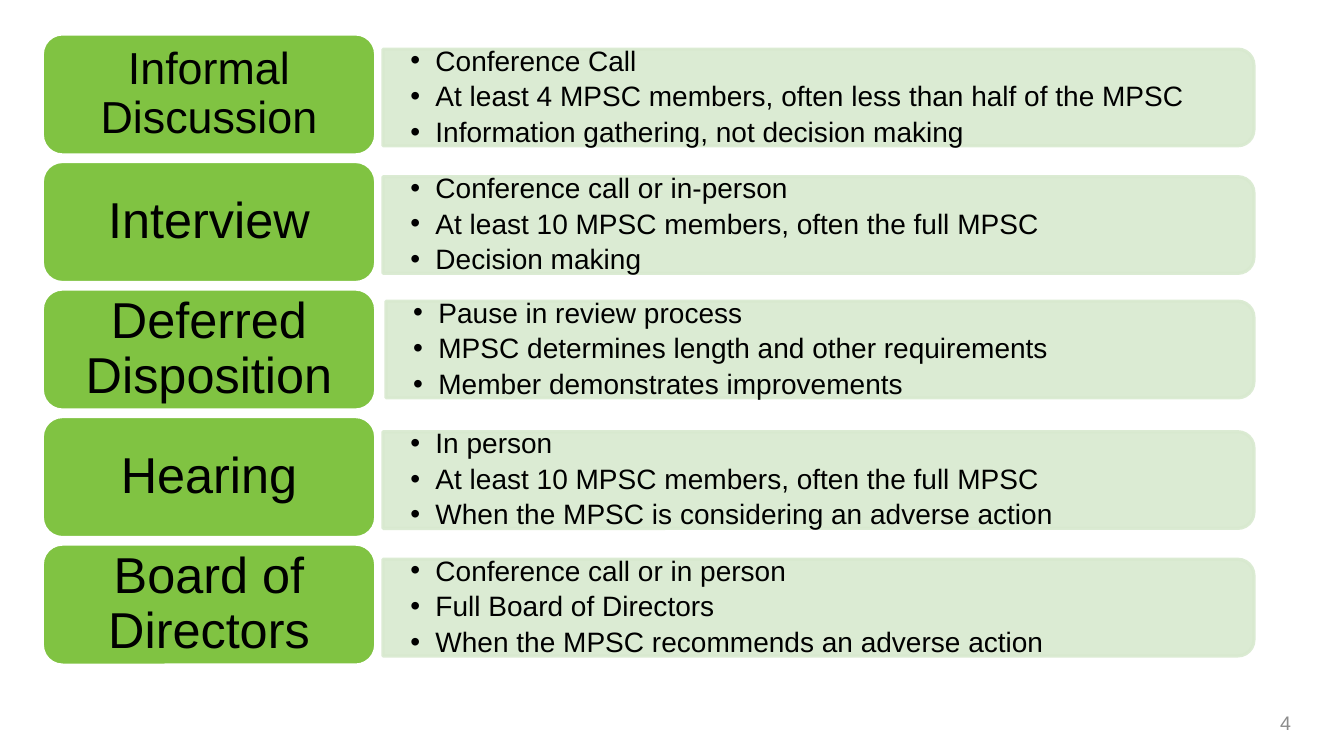
from dataclasses import dataclass

from lxml.etree import SubElement
from pptx import Presentation
from pptx.dml.color import RGBColor
from pptx.enum.shapes import MSO_SHAPE as Preset
from pptx.enum.text import MSO_ANCHOR as Anchor, PP_ALIGN as Align
from pptx.oxml.ns import qn
from pptx.shapes.autoshape import Shape
from pptx.slide import Slide
from pptx.text.text import TextFrame
from pptx.util import Inches, Length, Pt

GREEN = RGBColor(0x80, 0xC3, 0x42)
PALE_GREEN = RGBColor(0xD8, 0xE9, 0xCF)
WHITE = RGBColor(0xFF, 0xFF, 0xFF)
BLACK = RGBColor(0x00, 0x00, 0x00)
GRAY = RGBColor(0x8C, 0x8C, 0x8C)

SLIDE_WIDTH, SLIDE_HEIGHT = Inches(13.33), Inches(7.5)

# Percentages of the slide's width and height
FIRST_ROW, ROW_PITCH = 4.5, 16.87
LABEL_LEFT, LABEL_WIDTH, LABEL_HEIGHT = 3.15, 24.8, 16
PANEL_LEFT, PANEL_RIGHT, PANEL_HEIGHT = 28.5, 93.3, 12.8
PANEL_MIDDLE = 8.4


@dataclass
class Step:
    title: str
    points: list[str]
    title_size: int = 36
    shift_right: float = 0
    shift_down: float = 0


STEPS = [
    Step("Informal Discussion",
         ["Conference Call",
          "At least 4 MPSC members, often less than half of the MPSC",
          "Information gathering, not decision making"], title_size=32),
    Step("Interview",
         ["Conference call or in-person",
          "At least 10 MPSC members, often the full MPSC",
          "Decision making"]),
    Step("Deferred Disposition",
         ["Pause in review process",
          "MPSC determines length and other requirements",
          "Member demonstrates improvements"],
         shift_right=0.22, shift_down=-0.4),
    Step("Hearing",
         ["In person",
          "At least 10 MPSC members, often the full MPSC",
          "When the MPSC is considering an adverse action"]),
    Step("Board of Directors",
         ["Conference call or in person",
          "Full Board of Directors",
          "When the MPSC recommends an adverse action"]),
]


def across(percent: float) -> Length:
    return Length(round(SLIDE_WIDTH * percent / 100))


def down(percent: float) -> Length:
    return Length(round(SLIDE_HEIGHT * percent / 100))


def paint(shape: Shape, fill: RGBColor, line: RGBColor) -> None:
    shape.shadow.inherit = False
    shape.fill.solid()
    shape.fill.fore_color.rgb = fill
    shape.line.color.rgb = line
    shape.line.width = Pt(2.25)


def write(frame: TextFrame, text: str, size: int, color: RGBColor, align: Align,
          side_inset: float, end_inset: float, spacing: float = 1) -> None:
    frame.word_wrap = True
    frame.vertical_anchor = Anchor.MIDDLE
    frame.margin_left = frame.margin_right = Inches(side_inset)
    frame.margin_top = frame.margin_bottom = Inches(end_inset)
    frame.text = text
    for para in frame.paragraphs:
        para.alignment = align
        para.line_spacing = spacing
        for span in para.runs:
            span.font.name = "Arial"
            span.font.size = Pt(size)
            span.font.color.rgb = color


def add_bullets(frame: TextFrame) -> None:
    for index, para in enumerate(frame.paragraphs):
        para.level = 1
        para.space_before = Pt(3.8 if index else 0)
        properties = para._p.get_or_add_pPr()
        properties.set("marL", str(Inches(0.25)))
        properties.set("indent", str(-Inches(0.25)))
        SubElement(properties, qn("a:buFont"), typeface="Arial")
        SubElement(properties, qn("a:buChar"), char="•")


def draw_panel(page: Slide, step: Step, row_top: float) -> None:
    left = across(PANEL_LEFT + step.shift_right)
    width = across(PANEL_RIGHT) - left
    height = down(PANEL_HEIGHT)
    middle = down(row_top + PANEL_MIDDLE + step.shift_down)

    # Upright shape turned a quarter so its rounded corners face right
    panel = page.shapes.add_shape(
        Preset.ROUND_2_SAME_RECTANGLE, left + (width - height) // 2,
        middle - width // 2, height, width)
    panel.rotation = 90
    paint(panel, PALE_GREEN, PALE_GREEN)
    for color in panel._element.spPr.iter(qn("a:srgbClr")):
        SubElement(color, qn("a:alpha"), val="90000")

    text_height = down(11.6)
    box = page.shapes.add_textbox(left, middle - text_height // 2, width, text_height)
    write(box.text_frame, "\n".join(step.points), 20, BLACK, Align.LEFT, 0.27, 0.14, 0.9)
    add_bullets(box.text_frame)


def draw_label(page: Slide, step: Step, row_top: float) -> None:
    label = page.shapes.add_shape(
        Preset.ROUNDED_RECTANGLE, across(LABEL_LEFT), down(row_top),
        across(LABEL_WIDTH), down(LABEL_HEIGHT))
    paint(label, GREEN, WHITE)
    write(label.text_frame, step.title, step.title_size, BLACK, Align.CENTER, 0.14, 0.07, 0.9)


def main() -> None:
    deck = Presentation()
    deck.slide_width, deck.slide_height = SLIDE_WIDTH, SLIDE_HEIGHT
    page = deck.slides.add_slide(deck.slide_layouts[6])

    # Review steps
    for row, step in enumerate(STEPS):
        row_top = FIRST_ROW + row * ROW_PITCH
        draw_panel(page, step, row_top)
        draw_label(page, step, row_top)

    # Page number
    number = page.shapes.add_textbox(across(79.8), down(92.9), across(17), down(5.3))
    write(number.text_frame, "4", 14, GRAY, Align.RIGHT, 0.1, 0.05)

    deck.save("out.pptx")


if __name__ == "__main__":
    main()
